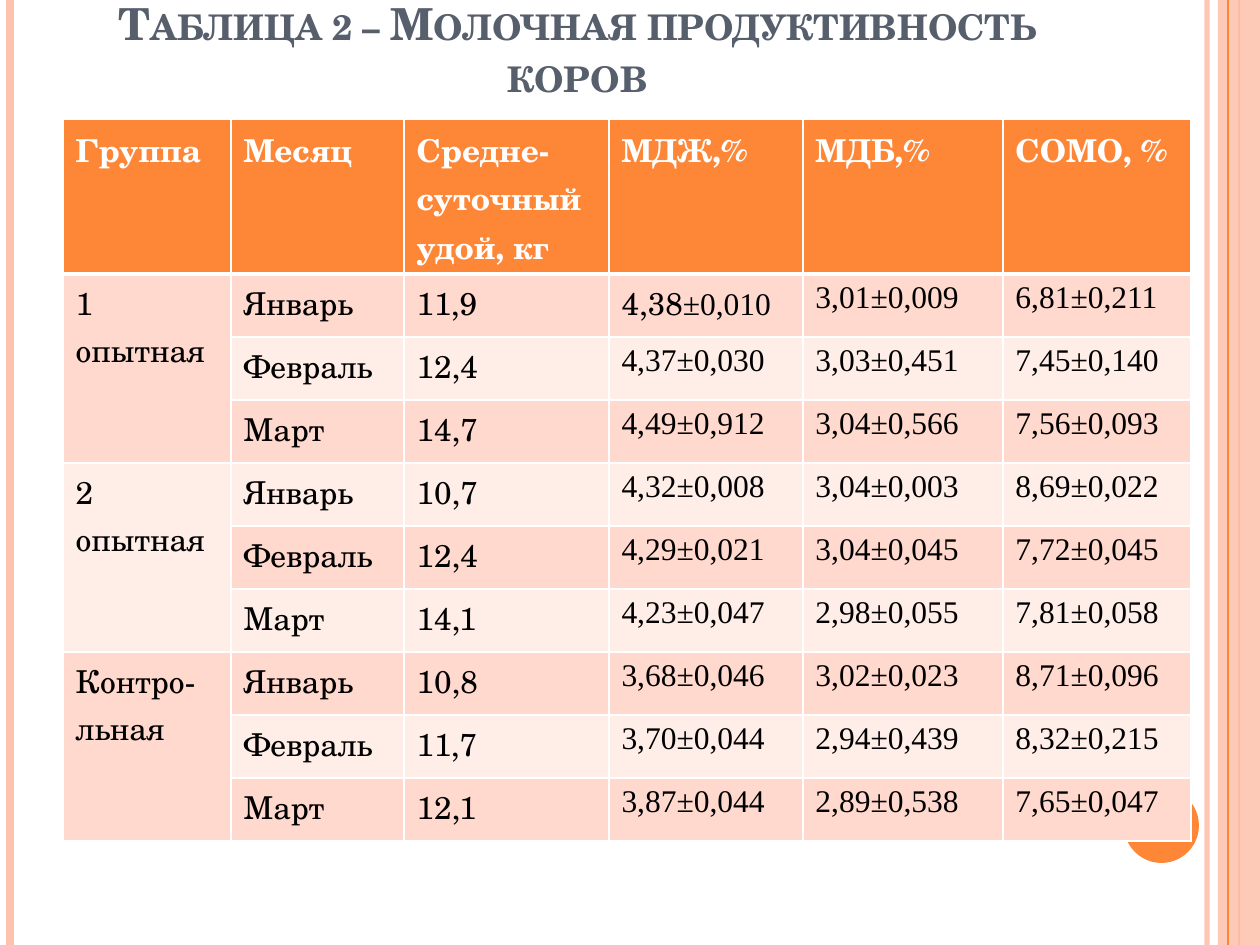
"""Builds a slide with a table of cow milk productivity by group and month."""
from pptx import Presentation
from pptx.dml.color import RGBColor
from pptx.enum.shapes import MSO_CONNECTOR as Connector, MSO_SHAPE as Shape
from pptx.enum.text import MSO_ANCHOR as Anchor, PP_ALIGN as Align
from pptx.oxml.ns import qn
from pptx.util import Pt
from lxml.etree import SubElement

PX = 914400 / 126
WIDTH, HEIGHT = 1260, 945
THEME = {
    "orange": "FE8637", "peach": "FEC3AE", "slate": "575F6D", "white": "FFFFFF",
    "black": "000000", "band": ["FFEDE8", "FFD9CE"],
    "serif": "TeX Gyre Schola", "numeric": "Times New Roman",
    "title_size": 25.2, "body_size": 18, "thin": 1, "thick": 3,
}


def emu(*lengths):
    return [round(length * PX) for length in lengths]


def vertical_line(shapes, x, color, weight, opacity):
    line = shapes.add_connector(Connector.STRAIGHT, *emu(x, 0, x, HEIGHT))
    line.line.color.rgb = RGBColor.from_string(color)
    line.line.width = Pt(weight)
    SubElement(line._element.spPr, qn("a:effectLst"))
    if opacity < 100:
        tint = line._element.spPr.find(".//" + qn("a:srgbClr"))
        SubElement(tint, qn("a:alpha"), val=str(opacity * 1000))


deck = Presentation()
deck.slide_width, deck.slide_height = emu(WIDTH, HEIGHT)
page = deck.slides.add_slide(deck.slide_layouts[6])
shapes = page.shapes

for x, color, weight, opacity in [
    (1207, "peach", 3, 93), (10, "peach", 4.5, 100), (1239, "orange", 1.5, 100),
]:
    vertical_line(shapes, x, THEME[color], weight, opacity)

for preset, frame, color, opacity in [
    (Shape.RECTANGLE, (1218, 0, 42, HEIGHT), "peach", 87),
    (Shape.OVAL, (1124, 788, 75, 75), "orange", 100),
]:
    if preset == Shape.OVAL:
        vertical_line(shapes, 1228, THEME["orange"], 0.75, 100)
    decoration = shapes.add_shape(preset, *emu(*frame))
    decoration.shadow.inherit = False
    decoration.fill.solid()
    decoration.fill.fore_color.rgb = RGBColor.from_string(THEME[color])
    decoration.line.fill.background()
    if opacity < 100:
        tint = decoration._element.spPr.find(".//" + qn("a:srgbClr"))
        SubElement(tint, qn("a:alpha"), val=str(opacity * 1000))

title = shapes.add_textbox(*emu(63, 38, 1029, 70)).text_frame
title.word_wrap = True
title.vertical_anchor = Anchor.BOTTOM
para = title.paragraphs[0]
para.alignment = Align.CENTER
span = para.add_run()
span.text = "Таблица 2 – Молочная продуктивность коров"
title_format = {"name": THEME["serif"], "size": Pt(THEME["title_size"]), "bold": True}
for key, value in title_format.items():
    setattr(span.font, key, value)
span.font.color.rgb = RGBColor.from_string(THEME["slate"])
span.font._element.set("cap", "small")

HEADERS = ["Группа", "Месяц", "Средне-суточный удой, кг", "МДЖ,%", "МДБ,%", "СОМО, %"]
MONTHS = ["Январь", "Февраль", "Март"]
GROUPS = {
    "1 опытная": [
        ("11,9", "4,38±0,010", "3,01±0,009", "6,81±0,211"),
        ("12,4", "4,37±0,030", "3,03±0,451", "7,45±0,140"),
        ("14,7", "4,49±0,912", "3,04±0,566", "7,56±0,093"),
    ],
    "2 опытная": [
        ("10,7", "4,32±0,008", "3,04±0,003", "8,69±0,022"),
        ("12,4", "4,29±0,021", "3,04±0,045", "7,72±0,045"),
        ("14,1", "4,23±0,047", "2,98±0,055", "7,81±0,058"),
    ],
    "Контро-\nльная": [
        ("10,8", "3,68±0,046", "3,02±0,023", "8,71±0,096"),
        ("11,7", "3,70±0,044", "2,94±0,439", "8,32±0,215"),
        ("12,1", "3,87±0,044", "2,89±0,538", "7,65±0,047"),
    ],
}
COLUMNS = [168, 173, 205, 194, 200, 188]
ROWS = [155] + [63] * 9

rows = [HEADERS]
for group, measurements in GROUPS.items():
    for index, (month, values) in enumerate(zip(MONTHS, measurements)):
        rows.append([group if index == 0 else "", month, *values])

table = shapes.add_table(
    len(ROWS), len(COLUMNS), *emu(63, 119, sum(COLUMNS), sum(ROWS))
).table
for column, width in zip(table.columns, emu(*COLUMNS)):
    column.width = width
for row, height in zip(table.rows, emu(*ROWS)):
    row.height = height
for top in range(1, len(ROWS), len(MONTHS)):
    table.cell(top, 0).merge(table.cell(top + len(MONTHS) - 1, 0))

for r, texts in enumerate(rows):
    for c, text in enumerate(texts):
        cell = table.cell(r, c)
        properties = cell._tc.get_or_add_tcPr()
        for side in ("lnL", "lnR", "lnT", "lnB"):
            thick = (r, side) in [(0, "lnB"), (1, "lnT")]
            weight = THEME["thick" if thick else "thin"]
            border = SubElement(properties, qn(f"a:{side}"), w=str(Pt(weight)))
            paint = SubElement(border, qn("a:solidFill"))
            SubElement(paint, qn("a:srgbClr"), val=THEME["white"])
        cell.fill.solid()
        fill = THEME["orange"] if r == 0 else THEME["band"][r % 2]
        cell.fill.fore_color.rgb = RGBColor.from_string(fill)
        if not text:
            continue
        cell.text = text
        if (r, c) == (1, 3):
            mean, error = text.split("±")
            para = cell.text_frame.paragraphs[0]
            para.runs[0].text = mean
            para.add_run().text = "±" + error
        for para in cell.text_frame.paragraphs:
            for span in para.runs:
                numeric = "±" in span.text
                cell_format = {
                    "name": THEME["numeric" if numeric else "serif"],
                    "size": Pt(THEME["body_size"]),
                    "bold": r == 0,
                }
                for key, value in cell_format.items():
                    setattr(span.font, key, value)
                ink = THEME["white" if r == 0 else "black"]
                span.font.color.rgb = RGBColor.from_string(ink)

deck.save("out.pptx")
